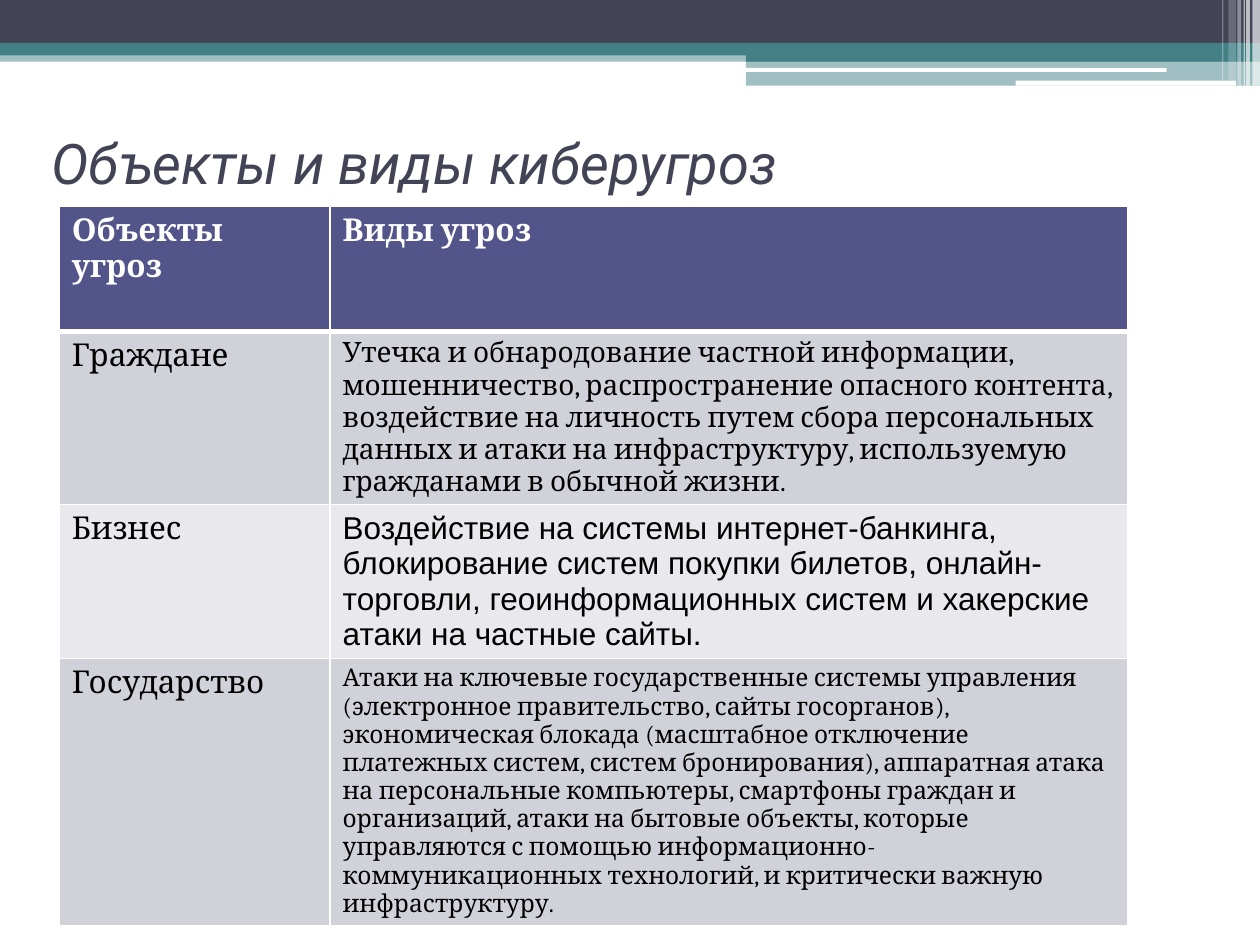
from dataclasses import dataclass

from lxml import etree
from pptx import Presentation
from pptx.dml.color import RGBColor
from pptx.enum.shapes import MSO_SHAPE
from pptx.enum.text import MSO_ANCHOR, PP_ALIGN
from pptx.oxml.ns import qn
from pptx.util import Inches, Pt

RECTANGLE = MSO_SHAPE.RECTANGLE
ROUNDED = MSO_SHAPE.ROUNDED_RECTANGLE
TOP, MIDDLE = MSO_ANCHOR.TOP, MSO_ANCHOR.MIDDLE
LEFT = PP_ALIGN.LEFT


@dataclass
class Theme:
    dark: str = "424456"
    teal: str = "438086"
    white: str = "FFFFFF"
    black: str = "000000"
    header: str = "53548A"
    odd_row: str = "D1D1DA"
    even_row: str = "E9E9ED"
    title_font: str = "Roboto"
    table_font: str = "Cambria"
    accent_font: str = "Arial"
    title_size: int = 32
    large: int = 18
    medium: int = 16
    small: int = 14


theme = Theme()


def add_run(paragraph, text, font, size, color, bold=False, italic=False):
    run = paragraph.add_run()
    run.text = text
    run.font.name = font
    run.font.size = Pt(size)
    run.font.color.rgb = RGBColor.from_string(color)
    run.font.bold = bold
    run.font.italic = italic


def set_border(cell, position, side, width):
    line = etree.Element(qn(f"a:ln{side}"), w=str(Pt(width)))
    fill = etree.SubElement(line, qn("a:solidFill"))
    etree.SubElement(fill, qn("a:srgbClr"), val=theme.white)
    cell._tc.get_or_add_tcPr().insert(position, line)


presentation = Presentation()
presentation.slide_width = Inches(10)
presentation.slide_height = Inches(7.5)
slide = presentation.slides.add_slide(presentation.slide_layouts[5])

bands = [
    (RECTANGLE, 0, 0.4, 10, 0.09, theme.teal, 50),
    (RECTANGLE, 0, 0, 10, 0.34, theme.dark, 100),
    (RECTANGLE, 0, 0.34, 10, 0.1, theme.teal, 100),
    (RECTANGLE, 5.92, 0.39, 4.08, 0.1, theme.teal, 100),
    (RECTANGLE, 5.92, 0.48, 4.08, 0.2, theme.teal, 50),
    (ROUNDED, 5.91, 0.54, 3.35, 0.03, theme.white, 100),
    (ROUNDED, 8.06, 0.64, 1.75, 0.04, theme.white, 100),
]
stripes = [
    (9.94, 0.06, 0.68, 65),
    (9.89, 0.03, 0.68, 65),
    (9.87, 0.01, 0.68, 60),
    (9.82, 0.03, 0.68, 40),
    (9.75, 0.06, 0.64, 20),
    (9.7, 0.01, 0.64, 30),
]
bands += [
    (RECTANGLE, left, 0, width, height, theme.white, opacity)
    for left, width, height, opacity in stripes
]
for preset, left, top, width, height, color, opacity in bands:
    shape = slide.shapes.add_shape(
        preset, Inches(left), Inches(top), Inches(width), Inches(height)
    )
    shape.shadow.inherit = False
    shape.line.fill.background()
    shape.fill.solid()
    shape.fill.fore_color.rgb = RGBColor.from_string(color)
    if opacity < 100:
        fill_color = shape.fill._xPr.find(qn("a:solidFill")).find(qn("a:srgbClr"))
        etree.SubElement(fill_color, qn("a:alpha"), val=str(opacity * 1000))

title = slide.shapes.title
title.left, title.top = Inches(0.31), Inches(0.7)
title.width, title.height = Inches(9), Inches(1.17)
title.text_frame.vertical_anchor = MIDDLE
title.text_frame.word_wrap = True
paragraph = title.text_frame.paragraphs[0]
paragraph.alignment = LEFT
add_run(paragraph, "Объекты и виды киберугроз", theme.title_font,
        theme.title_size, theme.dark, italic=True)

rows = [
    ("Объекты угроз", "Виды угроз",
     0.99, theme.header, theme.table_font, theme.large, TOP),
    ("Граждане",
     "Утечка и обнародование частной информации, мошенничество, "
     "распространение опасного контента, воздействие на личность путем сбора "
     "персональных данных и атаки на инфраструктуру, используемую гражданами "
     "в обычной жизни.",
     1.37, theme.odd_row, theme.table_font, theme.medium, TOP),
    ("Бизнес",
     "Воздействие на системы интернет-банкинга, блокирование систем покупки "
     "билетов, онлайн-торговли, геоинформационных систем и хакерские атаки "
     "на частные сайты.",
     1.22, theme.even_row, theme.accent_font, theme.large, MIDDLE),
    ("Государство",
     "Атаки на ключевые государственные системы управления (электронное "
     "правительство, сайты госорганов), экономическая блокада (масштабное "
     "отключение платежных систем, систем бронирования), аппаратная атака на "
     "персональные компьютеры, смартфоны граждан и организаций, атаки на "
     "бытовые объекты, которые управляются с помощью "
     "информационно-коммуникационных технологий, и критически важную "
     "инфраструктуру.",
     2.12, theme.odd_row, theme.table_font, theme.small, TOP),
]
table = slide.shapes.add_table(
    len(rows), 2, Inches(0.47), Inches(1.64), Inches(8.48), Inches(5.7)
).table
table.columns[0].width = Inches(2.15)
table.columns[1].width = Inches(6.33)

for index, (target, threats, height, fill, font, size, anchor) in enumerate(rows):
    table.rows[index].height = Inches(height)
    is_header = index == 0
    color = theme.white if is_header else theme.black
    contents = [
        (target, theme.table_font, theme.large, TOP),
        (threats, font, size, anchor),
    ]
    for column, (text, cell_font, cell_size, cell_anchor) in enumerate(contents):
        cell = table.cell(index, column)
        cell.fill.solid()
        cell.fill.fore_color.rgb = RGBColor.from_string(fill)
        cell.vertical_anchor = cell_anchor
        add_run(cell.text_frame.paragraphs[0], text, cell_font, cell_size,
                color, bold=is_header)
        widths = {"L": 1, "R": 1, "T": 3 if index == 1 else 1,
                  "B": 3 if is_header else 1}
        for position, (side, width) in enumerate(widths.items()):
            set_border(cell, position, side, width)

presentation.save("out.pptx")
